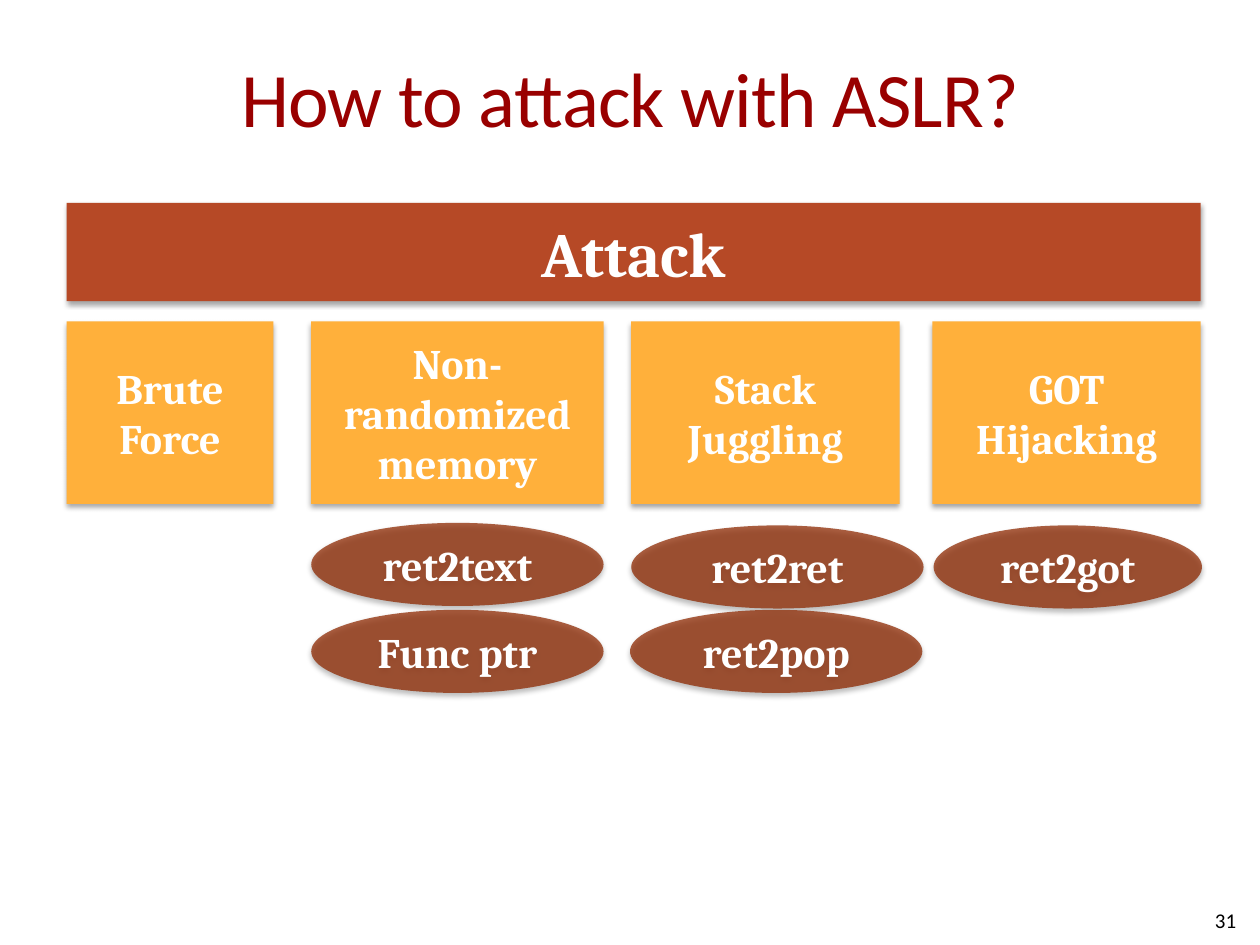
import pptx
import pptx.util
import pptx.dml.color
import pptx.enum.shapes
import pptx.enum.text
import pptx.oxml
import pptx.oxml.ns
from lxml import etree

Inches, Pt = pptx.util.Inches, pptx.util.Pt
RGB = pptx.dml.color.RGBColor.from_string
SHAPE = pptx.enum.shapes.MSO_SHAPE
ALIGN = pptx.enum.text.PP_ALIGN
MIDDLE = pptx.enum.text.MSO_ANCHOR.MIDDLE
qn = pptx.oxml.ns.qn

THEME = {
    "title": {"name": "Calibri", "size": Pt(44), "color": "990000"},
    "banner": {"name": "Cambria", "size": Pt(36), "bold": True, "color": "FFFFFF"},
    "label": {"name": "Cambria", "size": Pt(24), "bold": True, "color": "FFFFFF"},
    "number": {"name": "Calibri", "size": Pt(12), "color": "000000"},
    "banner_fill": "B64926",
    "method_fill": "FFB03B",
    "example_fill": "8E2800",
}
EXAMPLE_OPACITY = 74

SHADOW = (
    f'<a:outerShdw {pptx.oxml.ns.nsdecls("a")} blurRad="{Pt(3.1)}" dist="{Pt(1.8)}" '
    'dir="5400000" rotWithShape="0"><a:srgbClr val="000000"><a:alpha val="35000"/>'
    "</a:srgbClr></a:outerShdw>"
)


def write(sp, text, style, align=ALIGN.CENTER):
    """Fill a shape with middle-anchored text, one paragraph per line."""
    tf = sp.text_frame
    tf.word_wrap = True
    tf.vertical_anchor = MIDDLE
    tf.text = text
    for p in tf.paragraphs:
        p.alignment = align
        for r in p.runs:
            for key, value in THEME[style].items():
                if key == "color":
                    r.font.color.rgb = RGB(value)
                else:
                    setattr(r.font, key, value)


def add_block(kind, box, text, style, fill, opacity=100):
    """Add a borderless filled shape with a soft shadow below it."""
    sp = slide.shapes.add_shape(kind, *map(Inches, box))
    sp.fill.solid()
    sp.fill.fore_color.rgb = RGB(THEME[fill])
    if opacity < 100:
        color = sp.fill._xPr.find(f".//{qn('a:srgbClr')}")
        etree.SubElement(color, qn("a:alpha"), val=str(opacity * 1000))
    sp.line.fill.background()
    sp.shadow.inherit = False
    effects = sp._element.spPr.find(qn("a:effectLst"))
    effects.append(pptx.oxml.parse_xml(SHADOW))
    write(sp, text, style)


prs = pptx.Presentation()
prs.slide_width, prs.slide_height = Inches(10), Inches(7.5)
slide = prs.slides.add_slide(prs.slide_layouts[5])

# Title
title = slide.shapes.title
title.left, title.top, title.width, title.height = map(Inches, (0.5, 0.29, 9, 0.96))
write(title, "How to attack with ASLR?", "title")
title.text_frame.margin_left = title.text_frame.margin_right = 0
title.text_frame.paragraphs[0].runs[0].font._element.set("spc", "-50")

# Banner over the attack methods
add_block(SHAPE.RECTANGLE, (0.53, 1.61, 9, 0.78), "Attack", "banner", "banner_fill")

# Each method: left, width, name, then its examples as (left, top, width, name)
methods = [
    (0.53, 1.64, "Brute Force", []),
    (2.47, 2.32, "Non-randomized memory",
     [(2.47, 4.15, 2.32, "ret2text"), (2.47, 4.84, 2.32, "Func ptr")]),
    (5.01, 2.13, "Stack Juggling",
     [(5.01, 4.17, 2.32, "ret2ret"), (5, 4.84, 2.32, "ret2pop")]),
    (7.4, 2.13, "GOT\nHijacking", [(7.41, 4.17, 2.13, "ret2got")]),
]
for left, width, name, examples in methods:
    add_block(SHAPE.RECTANGLE, (left, 2.55, width, 1.45), name, "label", "method_fill")
    for x, y, w, example in examples:
        add_block(SHAPE.OVAL, (x, y, w, 0.66), example, "label", "example_fill",
                  EXAMPLE_OPACITY)

# Slide number
number = slide.shapes.add_textbox(*map(Inches, (7.58, 7.1, 2.33, 0.4)))
write(number, "31", "number", ALIGN.RIGHT)

prs.save("out.pptx")
